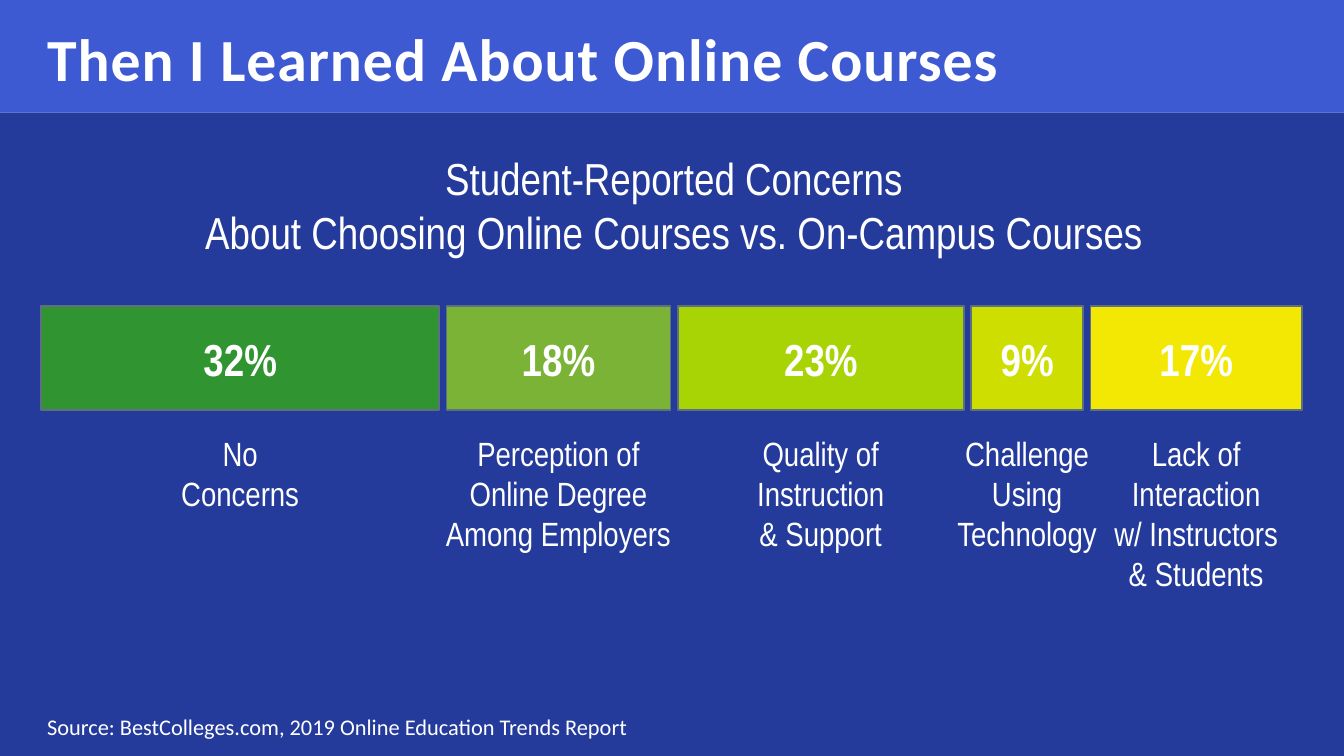
from dataclasses import dataclass

from pptx import Presentation
from pptx.dml.color import RGBColor
from pptx.enum.shapes import MSO_SHAPE
from pptx.enum.text import MSO_ANCHOR, PP_ALIGN
from pptx.shapes.autoshape import Shape
from pptx.slide import Slide
from pptx.util import Cm, Pt

WHITE = RGBColor(0xFF, 0xFF, 0xFF)
HEADER_BLUE = RGBColor(0x3E, 0x5A, 0xD2)
BODY_BLUE = RGBColor(0x24, 0x3B, 0x9C)
OUTLINE_GREY = RGBColor(0x5D, 0x70, 0x80)
DARK_GREEN = RGBColor(0x30, 0x94, 0x30)
GREEN = RGBColor(0x7B, 0xB3, 0x37)
LIME = RGBColor(0xA8, 0xD4, 0x06)
YELLOW_GREEN = RGBColor(0xCE, 0xDE, 0x00)
YELLOW = RGBColor(0xF3, 0xE8, 0x03)

HEADING_FONT = "Calibri"
CHART_FONT = "Arial Narrow"

# Lengths in centimetres
SLIDE_WIDTH, SLIDE_HEIGHT = 25.4, 14.29
HEADER_HEIGHT = 2.13
BAR_LEFT, BAR_TOP, BAR_HEIGHT = 0.78, 5.79, 1.96
BAR_GAP = 0.14
PERCENT_WIDTH = 0.235
LABEL_TOP = 8.05
LINE_HEIGHT, LABEL_PADDING = 0.77, 0.25


@dataclass(frozen=True)
class Box:
    left: float
    top: float
    width: float
    height: float


@dataclass(frozen=True)
class Concern:
    percent: int
    color: RGBColor
    label: str
    label_width: float


CONCERNS = [
    Concern(32, DARK_GREEN, "No\nConcerns", 2.77),
    Concern(18, GREEN, "Perception of\nOnline Degree\nAmong Employers", 4.83),
    Concern(23, LIME, "Quality of\nInstruction\n& Support", 2.95),
    Concern(9, YELLOW_GREEN, "Challenge\nUsing\nTechnology", 3.18),
    Concern(17, YELLOW, "Lack of\nInteraction\nw/ Instructors\n& Students", 3.63),
]


def write_text(shape: Shape, text: str, font_name: str, size: int,
               bold: bool = False, align: PP_ALIGN = PP_ALIGN.CENTER) -> None:
    shape.text_frame.text = text
    for paragraph in shape.text_frame.paragraphs:
        paragraph.alignment = align
        for run in paragraph.runs:
            run.font.name = font_name
            run.font.size = Pt(size)
            run.font.bold = bold
            run.font.color.rgb = WHITE


def add_rectangle(slide: Slide, box: Box, color: RGBColor) -> Shape:
    shape = slide.shapes.add_shape(
        MSO_SHAPE.RECTANGLE, Cm(box.left), Cm(box.top), Cm(box.width), Cm(box.height))
    shape.shadow.inherit = False
    shape.fill.solid()
    shape.fill.fore_color.rgb = color
    shape.line.fill.background()
    return shape


def add_text(slide: Slide, box: Box, text: str, font_name: str, size: int,
             bold: bool = False, align: PP_ALIGN = PP_ALIGN.CENTER) -> Shape:
    shape = slide.shapes.add_textbox(
        Cm(box.left), Cm(box.top), Cm(box.width), Cm(box.height))
    shape.text_frame.word_wrap = False
    write_text(shape, text, font_name, size, bold, align)
    return shape


def add_concern(slide: Slide, concern: Concern, left: float, width: float) -> None:
    """Draw one bar segment with its label centred below it."""
    bar = add_rectangle(slide, Box(left, BAR_TOP, width, BAR_HEIGHT), concern.color)
    bar.line.color.rgb = OUTLINE_GREY
    bar.line.width = Pt(0.85)
    bar.text_frame.vertical_anchor = MSO_ANCHOR.MIDDLE
    write_text(bar, f"{concern.percent}%", CHART_FONT, 24, bold=True)

    line_count = len(concern.label.splitlines())
    label_box = Box(left + (width - concern.label_width) / 2, LABEL_TOP,
                    concern.label_width, line_count * LINE_HEIGHT + LABEL_PADDING)
    add_text(slide, label_box, concern.label, CHART_FONT, 18)


def main() -> None:
    presentation = Presentation()
    presentation.slide_width = Cm(SLIDE_WIDTH)
    presentation.slide_height = Cm(SLIDE_HEIGHT)
    slide = presentation.slides.add_slide(presentation.slide_layouts[6])

    add_rectangle(slide, Box(0, 0, SLIDE_WIDTH, HEADER_HEIGHT), HEADER_BLUE)
    add_rectangle(slide, Box(0, HEADER_HEIGHT, SLIDE_WIDTH, SLIDE_HEIGHT - HEADER_HEIGHT),
                  BODY_BLUE)

    title = add_text(slide, Box(0.64, 0.28, 24.76, 1.7), "Then I Learned About Online Courses",
                     HEADING_FONT, 32, bold=True, align=PP_ALIGN.LEFT)
    title.text_frame.word_wrap = True
    # Letter spacing in hundredths of a point
    title.text_frame.paragraphs[0].runs[0].font._element.set("spc", "50")

    left = BAR_LEFT
    for concern in CONCERNS:
        width = concern.percent * PERCENT_WIDTH
        add_concern(slide, concern, left, width)
        left += width + BAR_GAP

    add_text(slide, Box(0.64, 13.36, 11.61, 0.76),
             "Source: BestColleges.com, 2019 Online Education Trends Report",
             HEADING_FONT, 12, align=PP_ALIGN.LEFT)
    add_text(slide, Box(3.4, 2.72, 18.67, 2.31),
             "Student-Reported Concerns\nAbout Choosing Online Courses vs. On-Campus Courses",
             CHART_FONT, 24)

    presentation.save("out.pptx")


if __name__ == "__main__":
    main()
